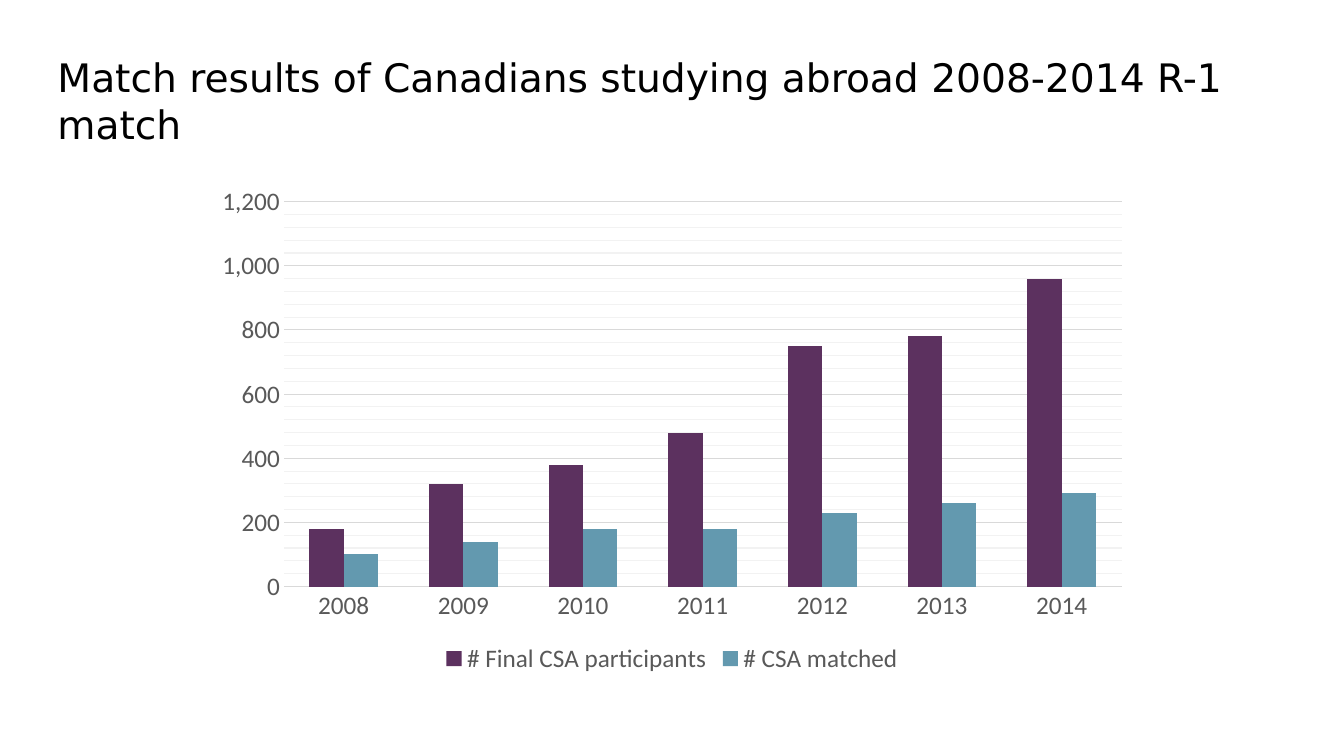
from copy import deepcopy

from pptx import Presentation
from pptx.chart.data import CategoryChartData
from pptx.dml.color import RGBColor
from pptx.enum.chart import XL_CHART_TYPE, XL_LEGEND_POSITION, XL_TICK_MARK
from pptx.enum.text import MSO_ANCHOR
from pptx.oxml.ns import qn
from pptx.util import Pt


def color(code):
    return RGBColor.from_string(code)


def style(font, name, size, code):
    font.name = name
    font.size = Pt(size)
    font.color.rgb = color(code)


deck = Presentation()
deck.slide_width, deck.slide_height = Pt(960), Pt(540)
slide = deck.slides.add_slide(deck.slide_layouts[6])

# Title
box = slide.shapes.add_textbox(Pt(34), Pt(31.5), Pt(892), Pt(80))
frame = box.text_frame
frame.word_wrap = True
frame.vertical_anchor = MSO_ANCHOR.MIDDLE
run = frame.paragraphs[0].add_run()
run.text = "Match results of Canadians studying abroad 2008-2014 R-1 match"
style(run.font, "DejaVu Sans", 28, "000000")

# Chart data
series = [
    ("# Final CSA participants", "5C315F", (180, 320, 380, 480, 750, 780, 960)),
    ("# CSA matched", "6399AF", (100, 140, 180, 180, 230, 260, 290)),
]
data = CategoryChartData(number_format="#,##0")
data.categories = [str(year) for year in range(2008, 2015)]
for name, _, vals in series:
    data.add_series(name, vals)

# Column chart
chart = slide.shapes.add_chart(
    XL_CHART_TYPE.COLUMN_CLUSTERED, Pt(145.5), Pt(126), Pt(669), Pt(359), data
).chart
style(chart.font, "Calibri", 18, "000000")
chart.has_title = False
chart.has_legend = True
chart.legend.position = XL_LEGEND_POSITION.BOTTOM
chart.legend.include_in_layout = False
style(chart.legend.font, "Calibri", 18, "595959")

plot = chart.plots[0]
plot.vary_by_categories = False
plot.gap_width = 150
plot.overlap = 0
for bars, (_, code, _) in zip(plot.series, series):
    bars.format.fill.solid()
    bars.format.fill.fore_color.rgb = color(code)
    bars.invert_if_negative = False

# Axes and gridlines
for axis in (chart.category_axis, chart.value_axis):
    axis.major_tick_mark = axis.minor_tick_mark = XL_TICK_MARK.NONE
    axis.format.line.fill.background()
    style(axis.tick_labels.font, "Calibri", 18, "595959")

scale = {
    "minimum_scale": 0,
    "maximum_scale": 1200,
    "major_unit": 200,
    "minor_unit": 40,
    "has_major_gridlines": True,
    "has_minor_gridlines": True,
}
axis = chart.value_axis
for key, val in scale.items():
    setattr(axis, key, val)
axis.tick_labels.number_format = "#,##0"
axis.tick_labels.number_format_is_linked = False
line = axis.major_gridlines.format.line
line.width = Pt(0.75)
line.color.rgb = color("D9D9D9")

# Minor gridlines take the major line format in a lighter grey
major = axis._element.find(qn("c:majorGridlines"))
minor = axis._element.find(qn("c:minorGridlines"))
minor.append(deepcopy(major.find(qn("c:spPr"))))
for tint in minor.iter(qn("a:srgbClr")):
    tint.set("val", "F2F2F2")

deck.save("out.pptx")
